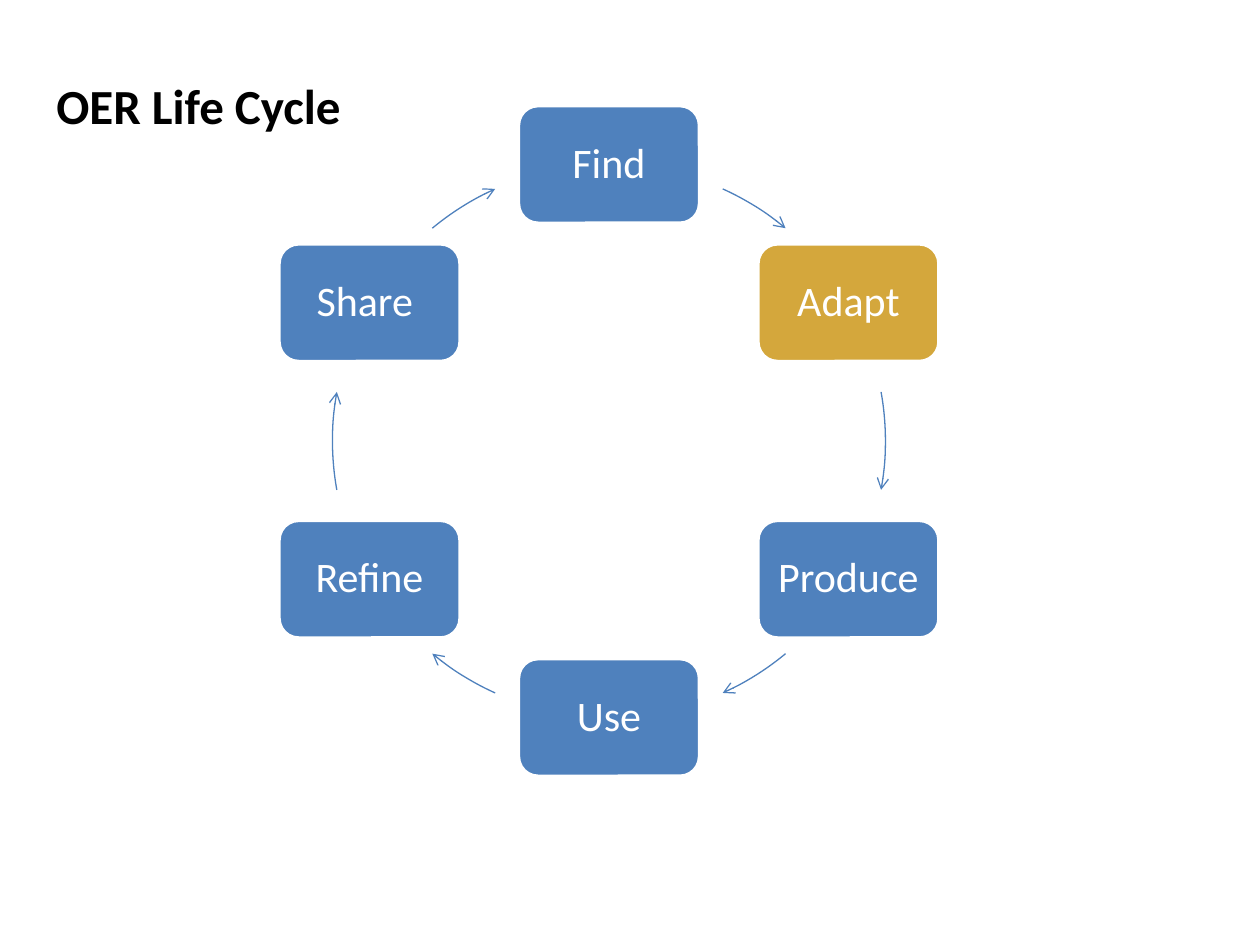
import math

from lxml import etree
from pptx import Presentation
from pptx import util as u
from pptx.dml import color
from pptx.enum import shapes, text
from pptx.oxml import ns

BLUE, GOLD, WHITE, BLACK = "4F81BD", "D4A73C", "FFFFFF", "000000"
MID_X, MID_Y, RADIUS = 348, 252, 158
BOX_W, BOX_H = 103.5, 67.25
STEPS = ["Find", "Adapt", "Produce", "Use", "Refine", "Share "]
# Middle angle and half sweep of each arrow, clockwise from three o'clock
ARROWS = [(-58, 7.7), (0, 10.2), (58, 7.7), (122, 7.7), (180, 10.2), (238, 7.7)]


def rgb(code):
    return color.RGBColor.from_string(code)


class Deck:
    font = "Calibri"

    def __init__(self, slide):
        self.slide = slide

    def style(self, para, size, ink, bold=False):
        para.font.name = self.font
        para.font.size = u.Pt(size)
        para.font.bold = bold
        para.font.color.rgb = rgb(ink)

    def add(self, kind, x, y, w, h, line, width):
        shape = self.slide.shapes.add_shape(
            kind, u.Pt(x), u.Pt(y), u.Pt(w), u.Pt(h))
        shape.shadow.inherit = False
        shape.line.color.rgb = rgb(line)
        shape.line.width = u.Pt(width)
        return shape

    def title(self, words):
        shape = self.slide.shapes.title
        shape.left, shape.top = u.Pt(25), u.Pt(15)
        shape.width, shape.height = u.Pt(648), u.Pt(90)
        frame = shape.text_frame
        frame.text = words
        frame.vertical_anchor = text.MSO_ANCHOR.MIDDLE
        para = frame.paragraphs[0]
        para.alignment = text.PP_ALIGN.LEFT
        self.style(para, 28, BLACK, bold=True)

    def step(self, words, angle, fill):
        """Add a box centred on the circle at an angle in degrees."""
        turn = math.radians(angle)
        x = MID_X + RADIUS * math.cos(turn) - BOX_W / 2
        y = MID_Y + RADIUS * math.sin(turn) - BOX_H / 2
        box = self.add(shapes.MSO_SHAPE.ROUNDED_RECTANGLE,
                       x, y, BOX_W, BOX_H, WHITE, 2)
        box.fill.solid()
        box.fill.fore_color.rgb = rgb(fill)
        frame = box.text_frame
        frame.word_wrap = True
        frame.vertical_anchor = text.MSO_ANCHOR.MIDDLE
        frame.margin_left = frame.margin_right = u.Pt(7)
        frame.text = words
        para = frame.paragraphs[0]
        para.alignment = text.PP_ALIGN.CENTER
        para.line_spacing = 0.9
        self.style(para, 24, WHITE)

    def arrow(self, middle, half):
        """Add a clockwise arrow along the circle."""
        arc = self.add(shapes.MSO_SHAPE.ARC, MID_X - RADIUS, MID_Y - RADIUS,
                       2 * RADIUS, 2 * RADIUS, BLUE, 0.75)
        arc.fill.background()
        # An adjustment of 0.6 is one degree
        for i, angle in enumerate((middle - half, middle + half)):
            arc.adjustments[i] = angle % 360 * 0.6
        line = arc.line._get_or_add_ln()
        etree.SubElement(line, ns.qn("a:tailEnd"), type="arrow")


def main():
    show = Presentation()
    show.slide_width, show.slide_height = u.Pt(720), u.Pt(540)
    deck = Deck(show.slides.add_slide(show.slide_layouts[5]))
    deck.title("OER Life Cycle")
    for i, (words, arrow) in enumerate(zip(STEPS, ARROWS)):
        deck.step(words, 60 * i - 90, GOLD if words == "Adapt" else BLUE)
        deck.arrow(*arrow)
    show.save("out.pptx")


if __name__ == "__main__":
    main()
